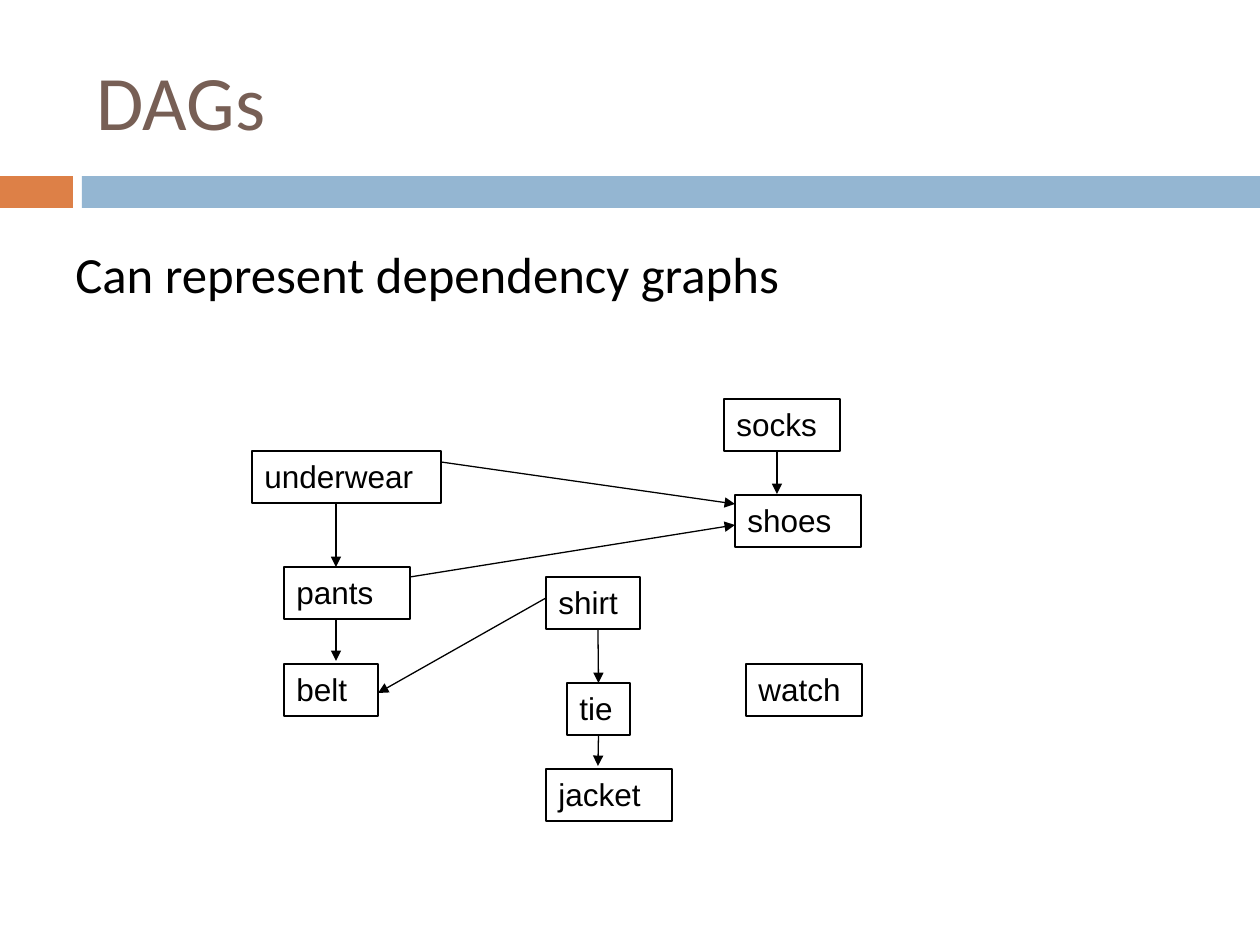
from lxml.etree import SubElement
from pptx import Presentation
from pptx.dml.color import RGBColor
from pptx.enum.shapes import MSO_CONNECTOR, MSO_SHAPE
from pptx.enum.text import MSO_ANCHOR as Anchor, PP_ALIGN as Align
from pptx.oxml.ns import qn
from pptx.util import Emu, Pt

PX = 914400 / 126
BLACK = RGBColor(0x00, 0x00, 0x00)
BROWN = RGBColor(0x77, 0x5F, 0x55)
ORANGE = RGBColor(0xDD, 0x80, 0x47)
BLUE = RGBColor(0x94, 0xB6, 0xD2)

BOX_HEIGHT = 52
TOP, BOTTOM = 0, 2

# Garment: left, top, width within the graph
GARMENTS = {
    "underwear": (0, 52, 189),
    "pants": (32, 168, 126),
    "belt": (32, 265, 94),
    "shirt": (294, 178, 94),
    "tie": (315, 284, 63),
    "jacket": (294, 370, 126),
    "socks": (472, 0, 116),
    "shoes": (483, 96, 126),
    "watch": (494, 265, 116),
}

# Start point, end point, joined start garment, joined end garment
DEPENDENCIES = [
    ((84, 105), (84, 168), None, None),
    ((84, 221), (84, 262), None, None),
    ((158, 178), (483, 126), None, None),
    ((525, 52), (525, 95), None, None),
    ((189, 63), (483, 105), None, None),
    ((294, 199), (126, 294), None, None),
    ((346, 231), (346, 284), None, "tie"),
    ((346, 336), (346, 367), "tie", None),
]


def px(*lengths):
    return [Emu(round(length * PX)) for length in lengths]


def write(shape, text, font_name, size, color, anchor=Anchor.TOP):
    frame = shape.text_frame
    frame.word_wrap = True
    frame.vertical_anchor = anchor
    frame.text = text
    paragraph = frame.paragraphs[0]
    paragraph.alignment = Align.LEFT
    font = paragraph.font
    font.name, font.size, font.color.rgb = font_name, Pt(size), color
    return paragraph


def add_rectangle(slide, left, top, width, height):
    shape = slide.shapes.add_shape(MSO_SHAPE.RECTANGLE, *px(left, top, width, height))
    shape.shadow.inherit = False
    return shape


def add_band(slide, left, top, width, height):
    accent, gap = 73, 9
    rest = accent + gap
    for offset, length, color in ((0, accent, ORANGE), (rest, width - rest, BLUE)):
        bar = add_rectangle(slide, left + offset, top, length, height)
        bar.fill.solid()
        bar.fill.fore_color.rgb = color
        bar.line.fill.background()


def add_title(slide, left, top, width, height):
    title = slide.shapes.title
    title.left, title.top, title.width, title.height = px(left, top, width, height)
    write(title, "DAGs", "Calibri", 44, BROWN, Anchor.MIDDLE)


def add_statement(slide, left, top, width, height):
    box = slide.shapes.add_textbox(*px(left, top, width, height))
    paragraph = write(box, "Can represent dependency graphs", "Calibri", 29, BLACK)
    paragraph.space_before = Pt(7)


def add_arrow(slide, start, end):
    arrow = slide.shapes.add_connector(MSO_CONNECTOR.STRAIGHT, *px(*start, *end))
    arrow.line.color.rgb = BLACK
    arrow.line.width = Pt(0.75)
    SubElement(arrow.line._get_or_add_ln(), qn("a:tailEnd"), type="triangle")
    SubElement(arrow._element.spPr, qn("a:effectLst"))
    return arrow


def add_graph(slide, left, top):
    # Garment boxes
    boxes = {}
    for name, (x, y, width) in GARMENTS.items():
        box = add_rectangle(slide, left + x, top + y, width, BOX_HEIGHT)
        box.fill.background()
        box.line.color.rgb = BLACK
        box.line.width = Pt(0.75)
        write(box, name, "Arial", 18, BLACK)
        boxes[name] = box

    # Dependency arrows
    for (x1, y1), (x2, y2), source, target in DEPENDENCIES:
        arrow = add_arrow(slide, (left + x1, top + y1), (left + x2, top + y2))
        if source:
            arrow.begin_connect(boxes[source], BOTTOM)
        if target:
            arrow.end_connect(boxes[target], TOP)


def main():
    presentation = Presentation()
    presentation.slide_width, presentation.slide_height = px(1260, 945)
    slide = presentation.slides.add_slide(presentation.slide_layouts[5])
    add_band(slide, 0, 176, 1260, 32)
    add_title(slide, 84, 32, 1124, 136)
    add_statement(slide, 63, 237, 1134, 100)
    add_graph(slide, 252, 399)
    presentation.save("out.pptx")


if __name__ == "__main__":
    main()
